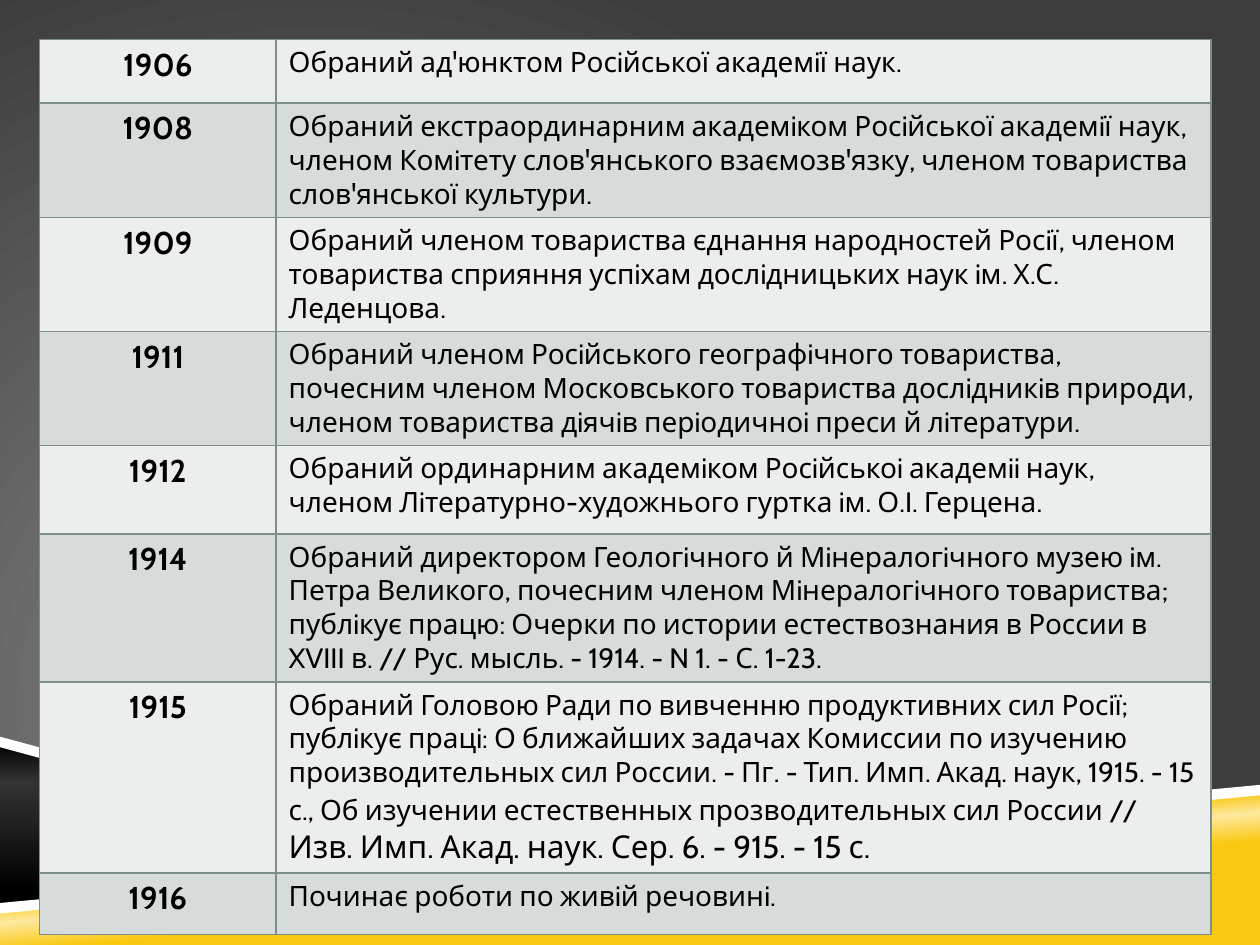
from lxml.etree import SubElement
from pptx import Presentation
from pptx.dml.color import RGBColor
from pptx.enum.text import PP_ALIGN
from pptx.oxml.ns import qn
from pptx.util import Pt

FONT = "Cabin"
COLUMN_WIDTHS = (135.2, 534.2)
ROW_HEIGHTS = (36.4, 63.4, 50.4, 63.4, 50.4, 82.1, 105.8, 35.3)
BAND_COLORS = ("ECEEEE", "D7DBDA")
BORDER_COLOR = "7D8F8C"
YELLOW = ((39, "FAC810"), (50, "FDE99F"), (58, "FAC810"))
BLACK = ((0, "000000"), (24, "333333"), (90, "000000"))
BACKGROUND = ((0, "878787"), (100, "3D3D3D"))

EVENTS = (
    ("1906", [("Обраний ад'юнктом Росiйської академiї наук.", 16)]),
    ("1908", [("Обраний екстраординарним академiком Росiйської академiї наук, "
               "членом Комiтету слов'янського взаємозв'язку, членом товариства "
               "слов'янської культури.", 16)]),
    ("1909", [("Обраний членом товариства єднання народностей Росiї, членом "
               "товариства сприяння успiхам дослiдницьких наук iм. Х.С. "
               "Леденцова.", 16)]),
    ("1911", [("Обраний членом Росiйського географiчного товариства, почесним "
               "членом Московського товариства дослiдникiв природи, членом "
               "товариства дiячiв перiодичноi преси й лiтератури.", 16)]),
    ("1912", [("Обраний ординарним академiком Росiйськоi академii наук, членом "
               "Лiтературно-художнього гуртка iм. О.I. Герцена.", 16)]),
    ("1914", [("Обраний директором Геологiчного й Мiнералогiчного музею iм. "
               "Петра Великого, почесним членом Мiнералогiчного товариства; "
               "публiкує працю: Очерки по истории естествознания в России в "
               "XVIII в. // Рус. мысль. - 1914. - N 1. - С. 1-23.", 16)]),
    ("1915", [("Обраний Головою Ради по вивченню продуктивних сил Росiї; "
               "публiкує працi: О ближайших задачах Комиссии по изучению "
               "производительных сил России. - Пг. - Тип. Имп. Акад. наук, "
               "1915. - 15 с., Об изучении естественных прозводительных сил "
               "России //", 16),
              (" Изв. Имп. Акад. наук. Сер. 6. - 915. - 15 с.", 18)]),
    ("1916", [("Починає роботи по живiй речовинi.", 16)]),
)


def color(value):
    return RGBColor.from_string(value)


def apply_gradient(fill, properties, stops, angle=None, focus=None):
    fill.solid()
    solid = properties.find(qn("a:solidFill"))
    gradient = solid.makeelement(qn("a:gradFill"), {"rotWithShape": "1"})
    properties.replace(solid, gradient)
    stop_list = SubElement(gradient, qn("a:gsLst"))
    for position, value in stops:
        stop = SubElement(stop_list, qn("a:gs"), pos=str(position * 1000))
        SubElement(stop, qn("a:srgbClr"), val=value)
    if focus:
        path = SubElement(gradient, qn("a:path"), {"path": "circle"})
        sides = {side: str(share * 1000) for side, share in zip("ltrb", focus)}
        SubElement(path, qn("a:fillToRect"), sides)
    else:
        SubElement(gradient, qn("a:lin"), ang=str(angle * 60000), scaled="0")


def add_background(slide):
    fill = slide.background.fill
    properties = slide._element.cSld.find(qn("p:bg")).find(qn("p:bgPr"))
    apply_gradient(fill, properties, BACKGROUND, focus=(50, 100, 100, 50))


def add_band(slide, points, fill_color=None, stops=None, angle=None):
    start, *others = [(Pt(x), Pt(y)) for x, y in points]
    builder = slide.shapes.build_freeform(*start)
    builder.add_line_segments(others, close=True)
    shape = builder.convert_to_shape()
    shape.shadow.inherit = False
    shape.line.fill.background()
    if stops:
        apply_gradient(shape.fill, shape._element.spPr, stops, angle)
    else:
        shape.fill.solid()
        shape.fill.fore_color.rgb = color(fill_color)


def add_borders(cell):
    properties = cell._tc.get_or_add_tcPr()
    for index, side in enumerate(("lnL", "lnR", "lnT", "lnB")):
        line = properties.makeelement(qn(f"a:{side}"), {"w": str(Pt(1))})
        properties.insert(index, line)
        fill = SubElement(line, qn("a:solidFill"))
        SubElement(fill, qn("a:srgbClr"), val=BORDER_COLOR)


def fill_cell(cell, runs, band_color, bold=False, alignment=PP_ALIGN.LEFT):
    cell.fill.solid()
    cell.fill.fore_color.rgb = color(band_color)
    add_borders(cell)
    paragraph = cell.text_frame.paragraphs[0]
    paragraph.alignment = alignment
    for text, size in runs:
        run = paragraph.add_run()
        run.text = text
        run.font.size = Pt(size)
        run.font.name = FONT
        run.font.bold = bold
        run.font.color.rgb = color("000000")


def add_events_table(slide):
    frame = slide.shapes.add_table(
        len(EVENTS), len(COLUMN_WIDTHS), Pt(22.6), Pt(22.6),
        Pt(sum(COLUMN_WIDTHS)), Pt(sum(ROW_HEIGHTS)))
    table = frame.table
    table.first_row = False
    table.horz_banding = False
    for column, width in zip(table.columns, COLUMN_WIDTHS):
        column.width = Pt(width)
    for index, (year, runs) in enumerate(EVENTS):
        table.rows[index].height = Pt(ROW_HEIGHTS[index])
        band_color = BAND_COLORS[index % 2]
        fill_cell(table.cell(index, 0), [(year, 18)], band_color,
                  bold=True, alignment=PP_ALIGN.CENTER)
        fill_cell(table.cell(index, 1), runs, band_color)


def main():
    presentation = Presentation()
    presentation.slide_width = Pt(720)
    presentation.slide_height = Pt(540)
    slide = presentation.slides.add_slide(presentation.slide_layouts[6])
    add_background(slide)
    add_band(slide, [(0, 519), (720, 451.5), (720, 540), (0, 540)],
             stops=YELLOW, angle=265)
    add_band(slide, [(0, 424), (258.5, 493), (0, 519)], stops=BLACK, angle=90)
    add_band(slide, [(720, 448.5), (0, 516), (0, 522), (720, 454.5)], "FFFFFF")
    add_band(slide, [(0, 421), (0, 427), (252, 495.5), (270, 494)], "FFFFFF")
    add_events_table(slide)
    presentation.save("out.pptx")


if __name__ == "__main__":
    main()
